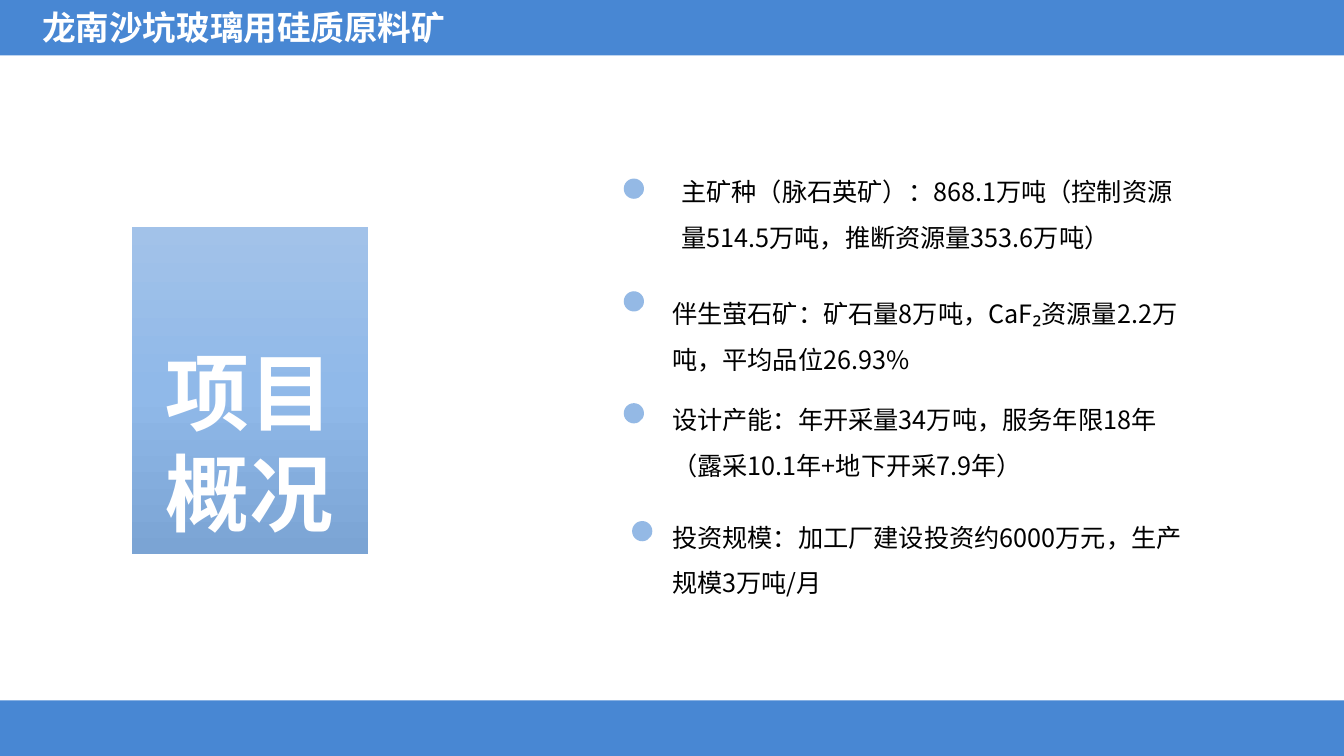
from copy import deepcopy
from dataclasses import dataclass

from lxml import etree
from pptx import Presentation
from pptx import util as u
from pptx.dml import color
from pptx.enum import shapes, text
from pptx.oxml import ns


@dataclass(frozen=True)
class Theme:
    bar: str = "4887D3"
    dot: str = "94B9E5"
    fade: tuple = ((0, "A2C2E9"), (0.5, "90B9E9"), (1, "7BA4D4"))
    ink: str = "000000"
    light: str = "FFFFFF"
    font: str = "Noto Sans CJK SC"
    latin: str = "Arial"
    body: int = 18
    title: int = 24
    panel: int = 60


@dataclass(frozen=True)
class Box:
    left: float
    top: float
    width: float
    height: float

    def place(self) -> tuple:
        return tuple(u.Cm(n) for n in (self.left, self.top, self.width, self.height))


@dataclass(frozen=True)
class Item:
    words: str
    box: Box
    dot: tuple


T = Theme()
WIDE, HIGH, BAR = 33.87, 19.05, 1.4
DOT = 0.51
ITEMS = (
    Item("主矿种（脉石英矿）：868.1万吨（控制资源量514.5万吨，推断资源量353.6万吨）",
         Box(16.92, 3.94, 13.23, 3.53), (15.72, 4.5)),
    Item("伴生萤石矿：矿石量8万吨，CaF₂资源量2.2万吨，平均品位26.93%",
         Box(16.69, 7.01, 13.46, 6.76), (15.72, 7.34)),
    Item("设计产能：年开采量34万吨，服务年限18年（露采10.1年+地下开采7.9年）",
         Box(16.69, 9.68, 13.46, 6.63), (15.72, 10.16)),
    Item("投资规模：加工厂建设投资约6000万元，生产规模3万吨/月",
         Box(16.69, 12.65, 13.46, 3.61), (15.93, 13.13)),
)


def rgb(code: str) -> color.RGBColor:
    return color.RGBColor.from_string(code)


def draw(slide, kind, box: Box, fill: str = ""):
    """Add a flat shape without line or shadow."""
    shape = slide.shapes.add_shape(kind, *box.place())
    shape.shadow.inherit = False
    shape.line.fill.background()
    if fill:
        shape.fill.solid()
        shape.fill.fore_color.rgb = rgb(fill)
    return shape


def fade(shape, stops: tuple) -> None:
    """Fill from top to bottom through three colours."""
    shape.fill.gradient()
    shape.fill.gradient_angle = 270
    first = shape.fill.gradient_stops[0]
    group = shape.fill._fill._gradFill.gsLst  # a third stop needs XML
    group.insert(1, deepcopy(group[0]))
    for stop, (spot, code) in zip(shape.fill.gradient_stops, stops):
        stop.position = spot
        stop.color.rgb = rgb(code)


def write(frame, words: str, *, size: int, ink: str, font: str = T.font,
          bold: bool = False, pitch: float = 1.0, wrap: bool = True,
          align=text.PP_ALIGN.LEFT, anchor=text.MSO_ANCHOR.TOP) -> None:
    """Fill a text frame, one paragraph a line."""
    frame.word_wrap = wrap
    frame.vertical_anchor = anchor
    for n, line in enumerate(words.split("\n")):
        para = frame.add_paragraph() if n else frame.paragraphs[0]
        para.alignment = align
        para.line_spacing = pitch
        run = para.add_run()
        run.text = line
        run.font.size = u.Pt(size)
        run.font.bold = bold
        run.font.name = font
        run.font.color.rgb = rgb(ink)
        east = etree.SubElement(run.font._element, ns.qn("a:ea"))
        east.set("typeface", T.font)


def main() -> None:
    deck = Presentation()
    deck.slide_width, deck.slide_height = u.Cm(WIDE), u.Cm(HIGH)
    slide = deck.slides.add_slide(deck.slide_layouts[6])
    kind = shapes.MSO_SHAPE

    # Bars at top and bottom
    for top in (0, HIGH - BAR):
        draw(slide, kind.RECTANGLE, Box(0, top, WIDE, BAR), T.bar)

    # Title
    title = slide.shapes.add_textbox(*Box(0.81, 0.05, 10.72, 1.27).place())
    write(title.text_frame, "龙南沙坑玻璃用硅质原料矿", size=T.title, ink=T.light,
          font=T.latin, bold=True, wrap=False, anchor=text.MSO_ANCHOR.MIDDLE)

    # Points with their dots
    for item in ITEMS:
        note = slide.shapes.add_textbox(*item.box.place())
        write(note.text_frame, item.words, size=T.body, ink=T.ink, pitch=u.Pt(32.5))
        draw(slide, kind.OVAL, Box(*item.dot, DOT, DOT), T.dot)

    # Section panel
    panel = draw(slide, kind.RECTANGLE, Box(3.33, 5.72, 5.94, 8.25))
    fade(panel, T.fade)
    panel.text_frame.margin_bottom = u.Cm(0.3)
    write(panel.text_frame, "项目\n概况", size=T.panel, ink=T.light, bold=True,
          pitch=u.Pt(72), align=text.PP_ALIGN.CENTER, anchor=text.MSO_ANCHOR.BOTTOM)

    deck.save("out.pptx")


if __name__ == "__main__":
    main()
